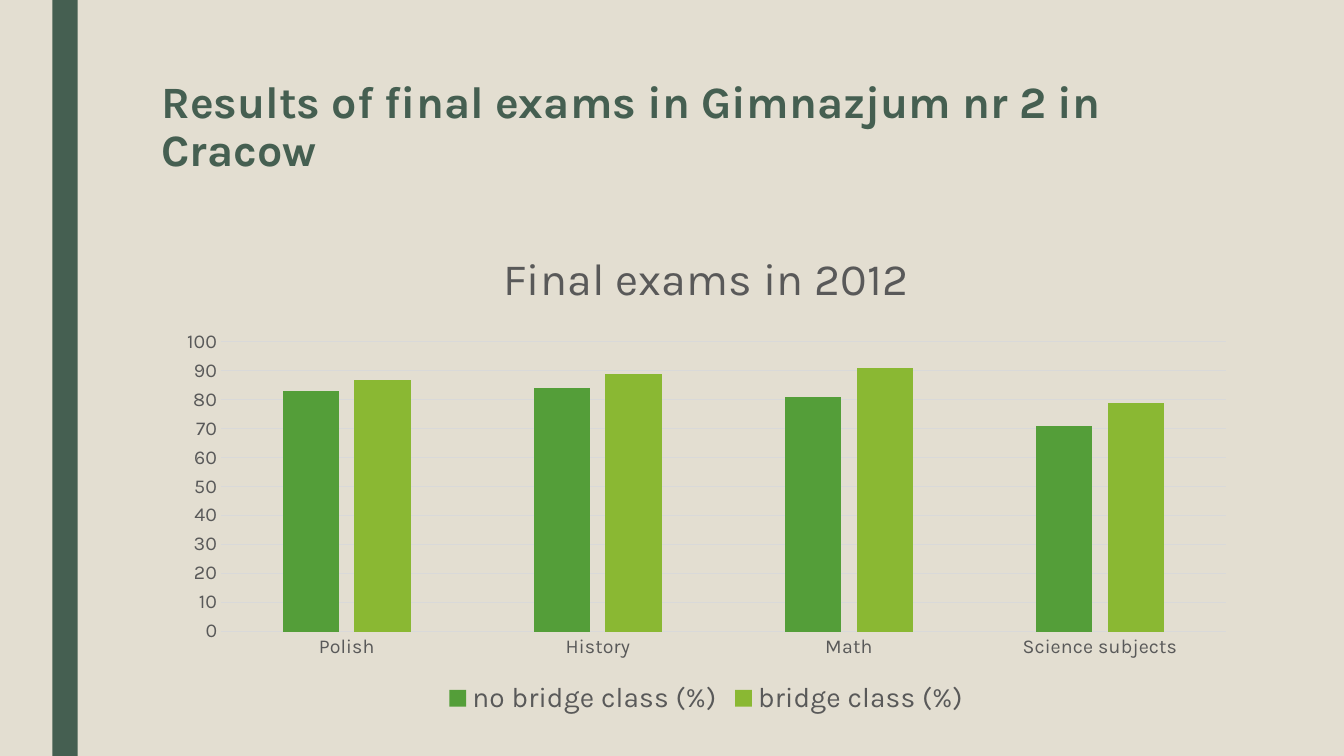
from pptx import Presentation
from pptx.chart.data import CategoryChartData
from pptx.dml.color import RGBColor
from pptx.enum import chart as ch, shapes, text
from pptx.util import Inches, Pt

# Content
HEADING = "Results of final exams in Gimnazjum nr 2 in Cracow"
CHART_TITLE = "Final exams in 2012"
SUBJECTS = ["Polish", "History", "Math", "Science subjects"]
RESULTS = {
    "no bridge class (%)": (83, 84, 81, 71),
    "bridge class (%)": (87, 89, 91, 79),
}


class Theme:
    font = "Karla"
    background, accent = "E3DED1", "455F51"
    chart_text, grid = "595959", "D9D9D9"
    bars = ["549E39", "8AB833"]
    title_size, legend_size, axis_size = 32, 20, 14
    hairline = 0.75


def rgb(value):
    return RGBColor.from_string(value)


def style_font(font, size, color, bold=False):
    font.name, font.size, font.bold = Theme.font, Pt(size), bold
    font.color.rgb = rgb(color)


def write(frame, words, *, size, color, bold=False, spacing=None):
    paragraph = frame.paragraphs[0]
    paragraph.line_spacing = spacing
    run = paragraph.add_run()
    run.text = words
    style_font(run.font, size, color, bold)


def style_line(line, color):
    line.color.rgb = rgb(color)
    line.width = Pt(Theme.hairline)


def add_results_chart(slide):
    data = CategoryChartData()
    data.categories = SUBJECTS
    for group, scores in RESULTS.items():
        data.add_series(group, scores)
    results = slide.shapes.add_chart(
        ch.XL_CHART_TYPE.COLUMN_CLUSTERED,
        Inches(1.64), Inches(2.24), Inches(10.73), Inches(4.91), data).chart
    style_font(results.font, Theme.axis_size, Theme.chart_text)

    # Chart title and legend
    results.has_title = True
    write(results.chart_title.text_frame, CHART_TITLE,
          size=Theme.title_size, color=Theme.chart_text)
    results.chart_title.include_in_layout = False
    results.has_legend = True
    results.legend.position = ch.XL_LEGEND_POSITION.BOTTOM
    results.legend.include_in_layout = False
    style_font(results.legend.font, Theme.legend_size, Theme.chart_text)

    # Axes
    subjects, scale = results.category_axis, results.value_axis
    for axis in (subjects, scale):
        axis.major_tick_mark = axis.minor_tick_mark = ch.XL_TICK_MARK.NONE
        style_font(axis.tick_labels.font, Theme.axis_size, Theme.chart_text)
    style_line(subjects.format.line, Theme.grid)
    scale.minimum_scale, scale.maximum_scale, scale.major_unit = 0, 100, 10
    scale.format.line.fill.background()
    style_line(scale.major_gridlines.format.line, Theme.grid)

    # Bars
    plot = results.plots[0]
    plot.gap_width, plot.overlap, plot.vary_by_categories = 219, -27, False
    for group, color in zip(plot.series, Theme.bars):
        group.invert_if_negative = False
        group.format.fill.solid()
        group.format.fill.fore_color.rgb = rgb(color)


def main():
    deck = Presentation()
    deck.slide_width, deck.slide_height = Inches(13.33), Inches(7.5)
    slide = deck.slides.add_slide(deck.slide_layouts[5])
    slide.background.fill.solid()
    slide.background.fill.fore_color.rgb = rgb(Theme.background)

    # Side stripe
    stripe = slide.shapes.add_shape(
        shapes.MSO_SHAPE.RECTANGLE, Inches(0.52), 0, Inches(0.25), deck.slide_height)
    stripe.shadow.inherit = False
    stripe.fill.solid()
    stripe.fill.fore_color.rgb = rgb(Theme.accent)
    stripe.line.fill.background()

    # Heading
    heading = slide.shapes.title
    heading.left, heading.top = Inches(1.5), Inches(0.75)
    heading.width, heading.height = Inches(10.5), Inches(1.62)
    frame = heading.text_frame
    frame.word_wrap = True
    frame.auto_size = text.MSO_AUTO_SIZE.NONE
    frame.vertical_anchor = text.MSO_ANCHOR.TOP
    frame.paragraphs[0].alignment = text.PP_ALIGN.LEFT
    write(frame, HEADING, size=Theme.title_size, color=Theme.accent,
          bold=True, spacing=0.89)

    add_results_chart(slide)
    deck.save("out.pptx")


if __name__ == "__main__":
    main()
